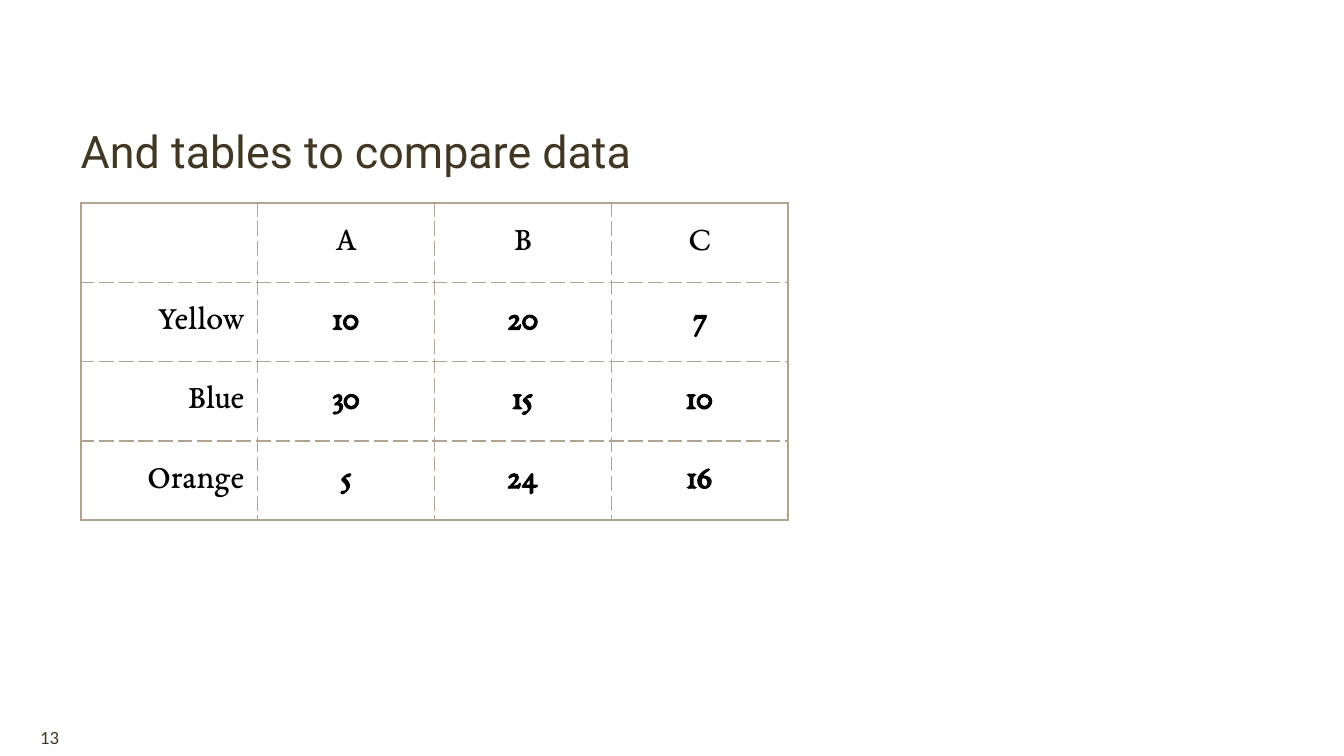
from dataclasses import dataclass

from lxml import etree
from pptx import Presentation
from pptx.dml.color import RGBColor
from pptx.enum.text import MSO_ANCHOR, PP_ALIGN
from pptx.oxml.ns import qn
from pptx.slide import Slide
from pptx.table import _Cell
from pptx.util import Pt

MIDDLE, BOTTOM = MSO_ANCHOR.MIDDLE, MSO_ANCHOR.BOTTOM
LEFT, CENTER, RIGHT = PP_ALIGN.LEFT, PP_ALIGN.CENTER, PP_ALIGN.RIGHT
EMU_PER_PX = 3175  # 288 px to the inch
SLIDE_WIDTH, SLIDE_HEIGHT = 2880, 1620


@dataclass(frozen=True)
class TextStyle:
    font: str
    size: int
    color: str
    bold: bool = False


@dataclass(frozen=True)
class Border:
    width: float
    dash: str


@dataclass(frozen=True)
class Theme:
    title: TextStyle = TextStyle("Roboto", 24, "413724")
    label: TextStyle = TextStyle("EB Garamond", 18, "000000")
    value: TextStyle = TextStyle("EB Garamond", 18, "000000", bold=True)
    page_number: TextStyle = TextStyle("Calibri", 10, "413724")
    border_color: str = "B0A491"
    cell_color: str = "FFFFFF"
    cell_opacity: int = 14
    outer: Border = Border(1.5, "solid")
    inner: Border = Border(0.75, "dash")


@dataclass(frozen=True)
class TextBlock:
    text: str
    left: int
    top: int
    width: int
    height: int
    style: TextStyle
    anchor: MSO_ANCHOR


THEME = Theme()
TITLE = TextBlock(
    "And tables to compare data", 173, 135, 1737, 245, THEME.title, BOTTOM)
PAGE_NUMBER = TextBlock("13", 86, 1539, 2713, 81, THEME.page_number, MIDDLE)
TABLE_LEFT, TABLE_TOP = 173, 435
COLUMN_WIDTH, ROW_HEIGHT = 379, 170
CELL_MARGIN_X, CELL_MARGIN_Y = 29, 21
ROWS = [
    ["", "A", "B", "C"],
    ["Yellow", "10", "20", "7"],
    ["Blue", "30", "15", "10"],
    ["Orange", "5", "24", "16"],
]


def px(length: int) -> int:
    return length * EMU_PER_PX


def write(paragraph, text: str, style: TextStyle, alignment: PP_ALIGN) -> None:
    paragraph.alignment = alignment
    run = paragraph.add_run()
    run.text = text
    run.font.name = style.font
    run.font.size = Pt(style.size)
    run.font.bold = style.bold
    run.font.color.rgb = RGBColor.from_string(style.color)


def add_text(slide: Slide, block: TextBlock) -> None:
    shape = slide.shapes.add_textbox(
        px(block.left), px(block.top), px(block.width), px(block.height))
    frame = shape.text_frame
    frame.word_wrap = True
    frame.vertical_anchor = block.anchor
    frame.margin_left = frame.margin_right = 0
    frame.margin_top = frame.margin_bottom = 0
    write(frame.paragraphs[0], block.text, block.style, LEFT)


def add_border(cell: _Cell, side: str, border: Border) -> None:
    properties = cell._tc.get_or_add_tcPr()
    line = etree.SubElement(properties, qn(f"a:ln{side}"), w=str(Pt(border.width)))
    fill = etree.SubElement(line, qn("a:solidFill"))
    etree.SubElement(fill, qn("a:srgbClr"), val=THEME.border_color)
    etree.SubElement(line, qn("a:prstDash"), val=border.dash)


def fill_cell(cell: _Cell) -> None:
    cell.fill.solid()
    cell.fill.fore_color.rgb = RGBColor.from_string(THEME.cell_color)
    color = cell._tc.tcPr.find(qn("a:solidFill")).find(qn("a:srgbClr"))
    etree.SubElement(color, qn("a:alpha"), val=str(THEME.cell_opacity * 1000))


def add_comparison_table(slide: Slide, rows: list[list[str]]) -> None:
    row_count, column_count = len(rows), len(rows[0])
    table = slide.shapes.add_table(
        row_count, column_count, px(TABLE_LEFT), px(TABLE_TOP),
        px(COLUMN_WIDTH * column_count), px(ROW_HEIGHT * row_count)).table
    table.first_row = table.horz_banding = False

    for row, texts in enumerate(rows):
        for column, text in enumerate(texts):
            cell = table.cell(row, column)
            cell.vertical_anchor = MIDDLE
            cell.margin_left = cell.margin_right = px(CELL_MARGIN_X)
            cell.margin_top = cell.margin_bottom = px(CELL_MARGIN_Y)
            on_edge = {
                "L": column == 0,
                "R": column == column_count - 1,
                "T": row == 0,
                "B": row == row_count - 1,
            }
            for side, is_outer in on_edge.items():
                add_border(cell, side, THEME.outer if is_outer else THEME.inner)
            fill_cell(cell)
            if text:
                style = THEME.value if row and column else THEME.label
                alignment = CENTER if column else RIGHT
                write(cell.text_frame.paragraphs[0], text, style, alignment)


def main() -> None:
    presentation = Presentation()
    presentation.slide_width = px(SLIDE_WIDTH)
    presentation.slide_height = px(SLIDE_HEIGHT)
    slide = presentation.slides.add_slide(presentation.slide_layouts[6])
    add_text(slide, TITLE)
    add_comparison_table(slide, ROWS)
    add_text(slide, PAGE_NUMBER)
    presentation.save("out.pptx")


if __name__ == "__main__":
    main()
